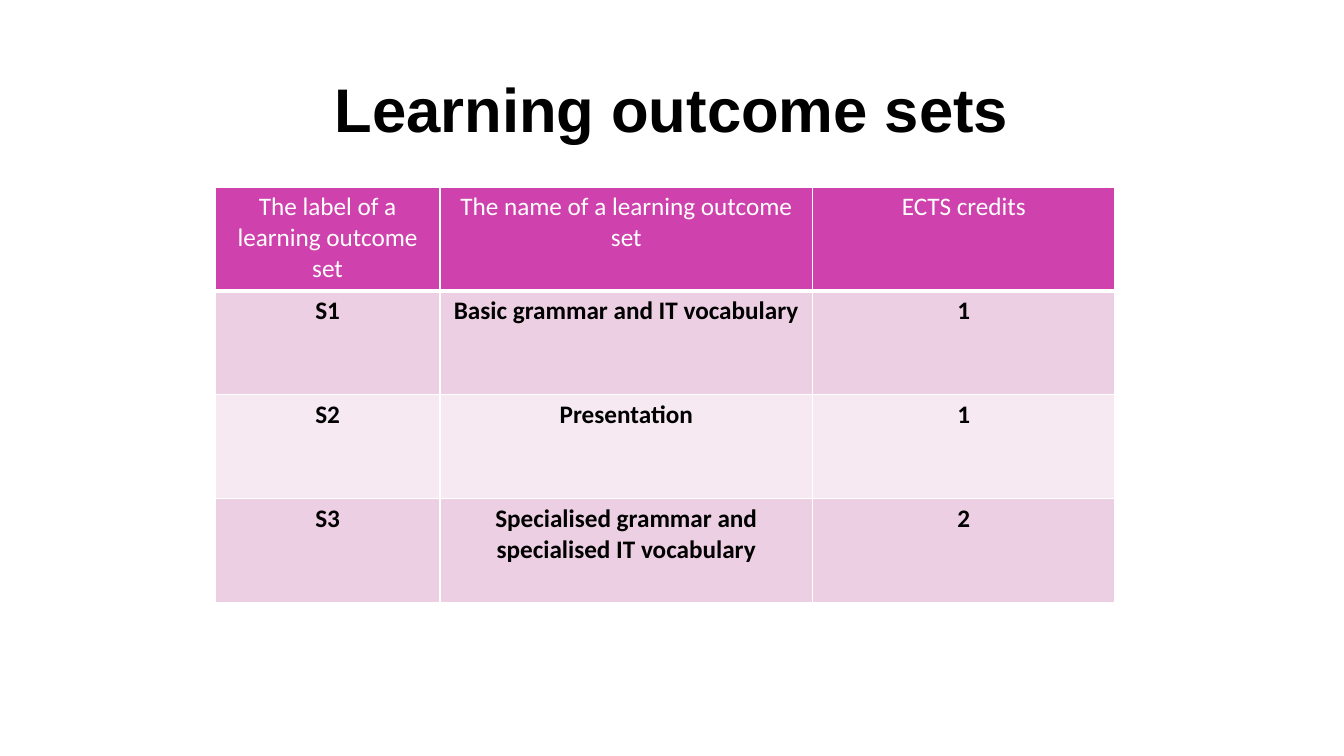
from lxml.etree import SubElement
from pptx import Presentation
from pptx.dml.color import RGBColor
from pptx.enum.text import MSO_ANCHOR as Anchor, PP_ALIGN as Align
from pptx.oxml.ns import qn
from pptx.util import Pt

PX = 9525
SLIDE = (1280, 720)
COLORS = {"header": "CF41AD", "odd": "EDCFE3", "even": "F6E9F1",
          "white": "FFFFFF", "black": "000000"}

TITLE = "Learning outcome sets"
TITLE_BOX = (88, 38, 1104, 139)
ROWS = [
    ("The label of a learning outcome set", "The name of a learning outcome set", "ECTS credits"),
    ("S1", "Basic grammar and IT vocabulary", "1"),
    ("S2", "Presentation", "1"),
    ("S3", "Specialised grammar and specialised IT vocabulary", "2"),
]
TABLE_LEFT, TABLE_TOP = 205, 178
COL_WIDTHS = (214, 355, 288)
ROW_HEIGHT = 99

TITLE_FONT = {"name": "Arial", "size": Pt(44), "bold": True}
HEADER_FONT = {"name": "Calibri", "size": Pt(18), "bold": False}
BODY_FONT = {"name": "Calibri", "size": Pt(18), "bold": True}


def emu(*lengths):
    return [n * PX for n in lengths]


def write(tf, text, font, color):
    p = tf.paragraphs[0]
    p.alignment = Align.CENTER
    r = p.add_run()
    r.text = text
    for name, value in font.items():
        setattr(r.font, name, value)
    r.font.color.rgb = RGBColor.from_string(COLORS[color])
    return p


def add_borders(cell, bottom):
    props = cell._tc.get_or_add_tcPr()
    widths = {"lnL": 1, "lnR": 1, "lnT": 1, "lnB": bottom}
    for i, (side, width) in enumerate(widths.items()):
        line = SubElement(props, qn("a:" + side), w=str(Pt(width)))
        fill = SubElement(line, qn("a:solidFill"))
        SubElement(fill, qn("a:srgbClr"), val=COLORS["white"])
        props.insert(i, line)


def add_title(slide):
    tf = slide.shapes.add_textbox(*emu(*TITLE_BOX)).text_frame
    tf.word_wrap = True
    tf.vertical_anchor = Anchor.MIDDLE
    write(tf, TITLE, TITLE_FONT, "black").line_spacing = 0.9


def add_outcome_table(slide):
    box = emu(TABLE_LEFT, TABLE_TOP, sum(COL_WIDTHS), ROW_HEIGHT * len(ROWS))
    table = slide.shapes.add_table(len(ROWS), len(COL_WIDTHS), *box).table
    table.horz_banding = False
    for column, width in zip(table.columns, COL_WIDTHS):
        column.width = width * PX
    for i, texts in enumerate(ROWS):
        fill = "header" if i == 0 else "odd" if i % 2 else "even"
        font, color = (BODY_FONT, "black") if i else (HEADER_FONT, "white")
        for j, text in enumerate(texts):
            cell = table.cell(i, j)
            cell.fill.solid()
            cell.fill.fore_color.rgb = RGBColor.from_string(COLORS[fill])
            write(cell.text_frame, text, font, color)
            add_borders(cell, 1 if i else 3)


def main():
    prs = Presentation()
    prs.slide_width, prs.slide_height = emu(*SLIDE)
    s = prs.slides.add_slide(prs.slide_layouts[6])
    add_title(s)
    add_outcome_table(s)
    prs.save("out.pptx")


if __name__ == "__main__":
    main()
